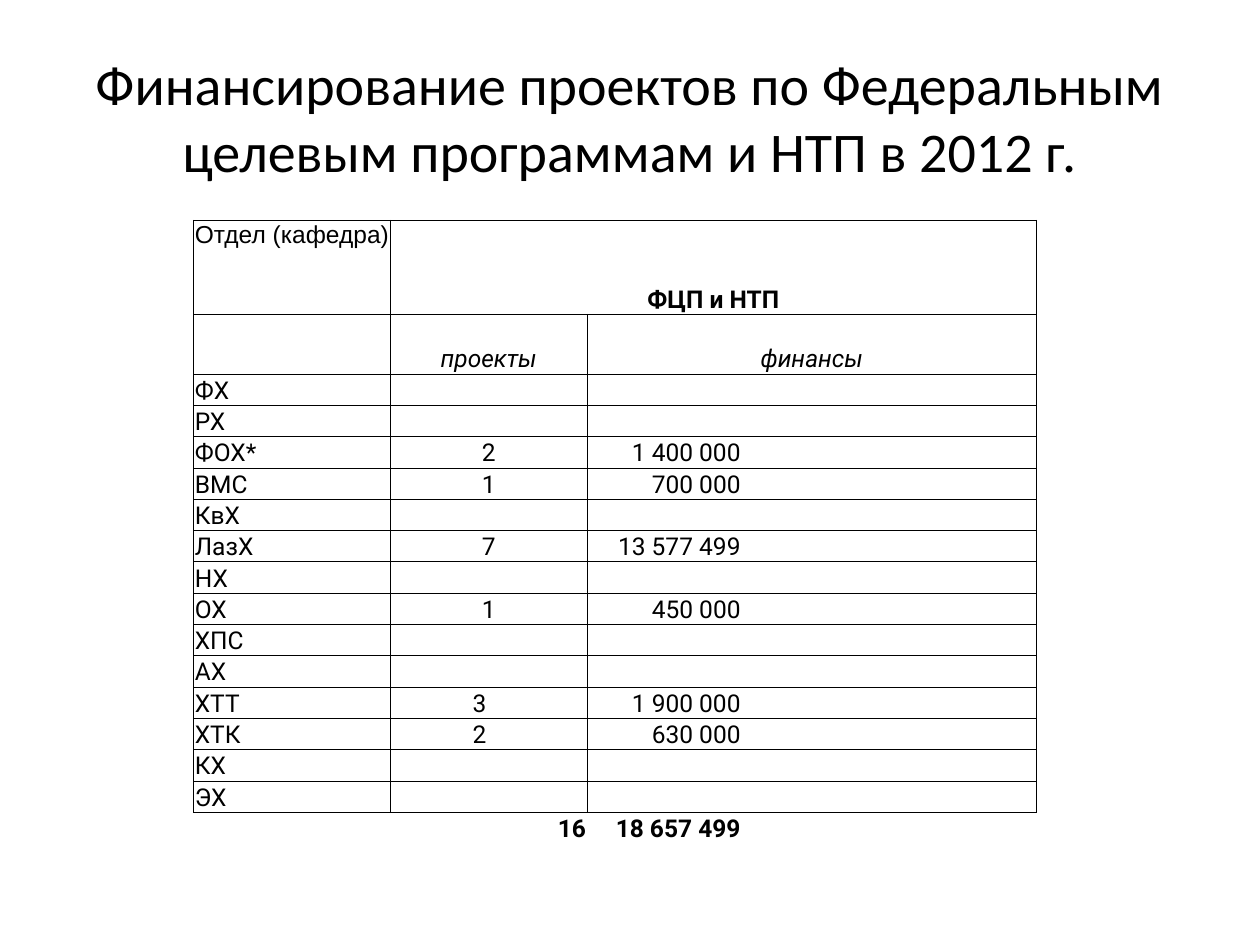
from dataclasses import dataclass
from typing import Any

from lxml import etree
from pptx import Presentation
from pptx.dml.color import RGBColor
from pptx.enum.text import MSO_ANCHOR, PP_ALIGN
from pptx.oxml.ns import qn
from pptx.util import Pt

LEFT, CENTER, RIGHT = PP_ALIGN.LEFT, PP_ALIGN.CENTER, PP_ALIGN.RIGHT
TOP, MIDDLE, BOTTOM = MSO_ANCHOR.TOP, MSO_ANCHOR.MIDDLE, MSO_ANCHOR.BOTTOM
BLACK = RGBColor(0, 0, 0)
TITLE_ONLY = 5
SIDES = ("lnL", "lnR", "lnT", "lnB")
FINANCE_MARGIN = 169
SHIFTED_MARGIN = 11.5

TITLE = "Финансирование проектов по Федеральным целевым программам и НТП в 2012 г."
DEPARTMENTS = [
    ("ФХ", "", ""),
    ("РХ", "", ""),
    ("ФОХ*", "2", "1 400 000"),
    ("ВМС", "1", "700 000"),
    ("КвХ", "", ""),
    ("ЛазХ", "7", "13 577 499"),
    ("НХ", "", ""),
    ("ОХ", "1", "450 000"),
    ("ХПС", "", ""),
    ("АХ", "", ""),
    ("ХТТ", "3", "1 900 000"),
    ("ХТК", "2", "630 000"),
    ("КХ", "", ""),
    ("ЭХ", "", ""),
]
SHIFTED = ("ХТТ", "ХТК")
TOTAL = ("", "16", "18 657 499")


def write(frame, text, *, font="Roboto", size=14, color=BLACK, align=LEFT,
          bold=False, italic=False):
    para = frame.paragraphs[0]
    para.alignment = align
    if not text:
        para._p.get_or_add_endParaRPr().set("sz", str(size * 100))
        return
    span = para.add_run()
    span.text = text
    span.font.name = font
    span.font.size = Pt(size)
    span.font.bold = bold
    span.font.italic = italic
    span.font.color.rgb = color


@dataclass
class SlideBuilder:
    page: Any
    line_color: RGBColor = BLACK
    line_width: float = 0.5

    def title(self, text, left, top, width, height):
        box = self.page.shapes.title
        box.left, box.top = Pt(left), Pt(top)
        box.width, box.height = Pt(width), Pt(height)
        box.text_frame.word_wrap = True
        box.text_frame.vertical_anchor = MIDDLE
        write(box.text_frame, text, font="Calibri", size=32, align=CENTER)

    def table(self, left, top, widths, heights):
        frame = self.page.shapes.add_table(
            len(heights), len(widths), Pt(left), Pt(top),
            Pt(sum(widths)), Pt(sum(heights)))
        table = frame.table
        table.first_row = False
        table.horz_banding = False
        for column, width in zip(table.columns, widths):
            column.width = Pt(width)
        for row, height in zip(table.rows, heights):
            row.height = Pt(height)
        return table

    def borders(self, cell, visible):
        properties = cell._tc.get_or_add_tcPr()
        for index, side in enumerate(SIDES):
            line = etree.Element(qn(f"a:{side}"), w=str(Pt(self.line_width)))
            if side in visible:
                fill = etree.SubElement(line, qn("a:solidFill"))
                etree.SubElement(fill, qn("a:srgbClr"), val=str(self.line_color))
            else:
                etree.SubElement(line, qn("a:noFill"))
            properties.insert(index, line)

    def cell(self, cell, text="", *, anchor=BOTTOM, margin_right=0.75,
             visible=SIDES, **style):
        cell.margin_left = cell.margin_top = Pt(0.75)
        cell.margin_right = Pt(margin_right)
        cell.margin_bottom = Pt(0)
        cell.vertical_anchor = anchor
        cell.fill.background()
        self.borders(cell, visible)
        write(cell.text_frame, text, **style)


def main():
    deck = Presentation()
    deck.slide_width, deck.slide_height = Pt(720), Pt(540)
    builder = SlideBuilder(deck.slides.add_slide(deck.slide_layouts[TITLE_ONLY]))
    builder.title(TITLE, 36, 21.6, 648, 90)

    row_count = len(DEPARTMENTS) + 1
    table = builder.table(110.6, 125.9, [112.5, 112.5, 256.7],
                          [53.7, 34.2] + [17.9] * row_count)

    table.cell(0, 1).merge(table.cell(0, 2))
    builder.cell(table.cell(0, 0), "Отдел (кафедра)", font="Arial",
                 align=CENTER, anchor=TOP)
    builder.cell(table.cell(0, 1), "ФЦП и НТП", align=CENTER, bold=True)
    builder.cell(table.cell(0, 2))
    for column, heading in enumerate(("", "проекты", "финансы")):
        builder.cell(table.cell(1, column), heading, align=CENTER, italic=True)

    for row, (name, projects, finance) in enumerate(DEPARTMENTS, start=2):
        builder.cell(table.cell(row, 0), name)
        builder.cell(table.cell(row, 1), projects, align=CENTER,
                     margin_right=SHIFTED_MARGIN if name in SHIFTED else 0.75)
        builder.cell(table.cell(row, 2), finance, align=RIGHT,
                     margin_right=FINANCE_MARGIN)

    for column, (text, margin) in enumerate(zip(TOTAL, (0.75, 0.75, FINANCE_MARGIN))):
        builder.cell(table.cell(row_count + 1, column), text, align=RIGHT,
                     bold=True, margin_right=margin, visible=("lnT",))

    deck.save("out.pptx")


if __name__ == "__main__":
    main()
